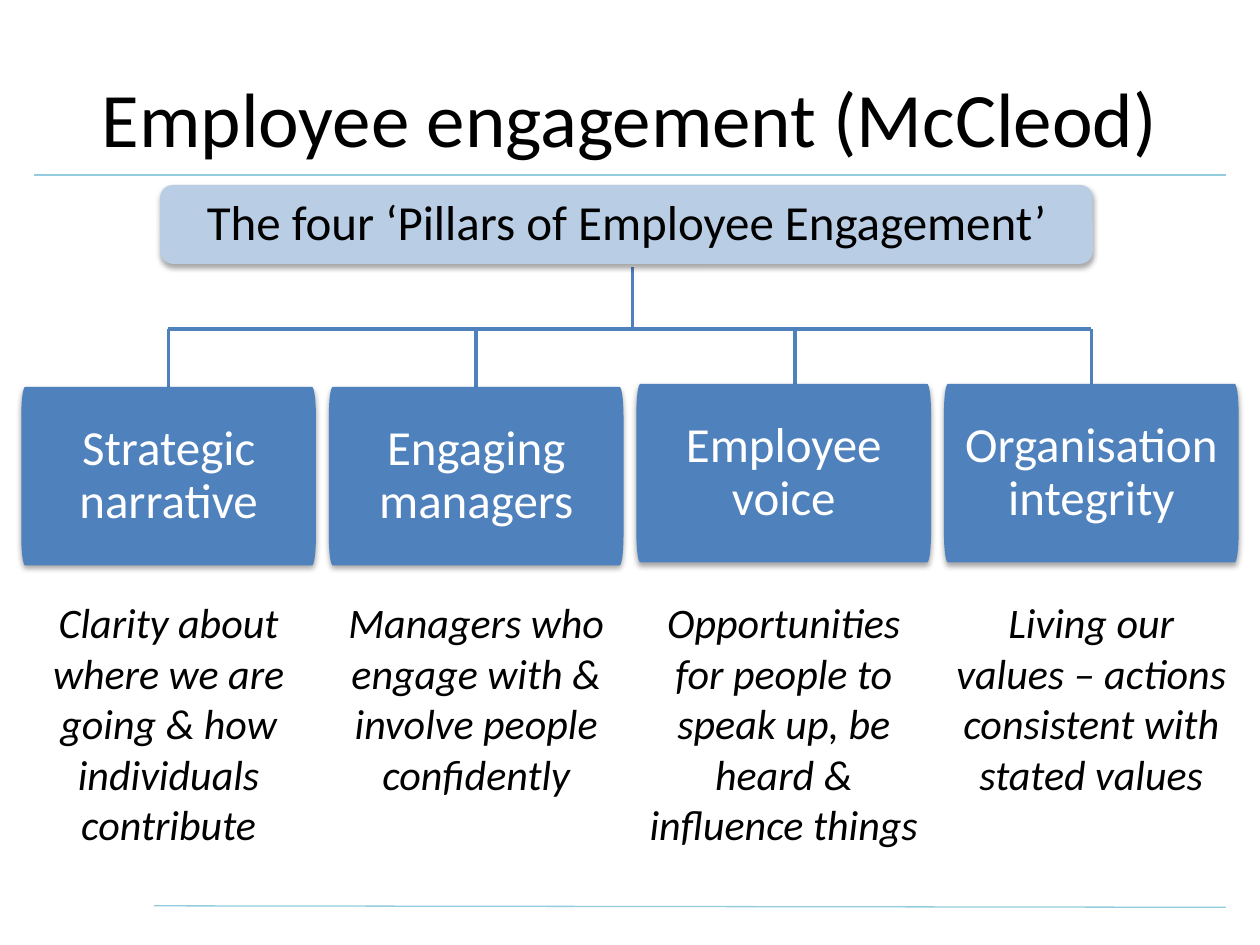
from dataclasses import dataclass
from math import cos, pi, sin

from lxml import etree
from pptx import Presentation
from pptx.dml.color import RGBColor
from pptx.enum.shapes import MSO_CONNECTOR, MSO_SHAPE
from pptx.enum.text import MSO_ANCHOR, MSO_AUTO_SIZE, PP_ALIGN
from pptx.oxml.ns import qn
from pptx.shapes.autoshape import Shape
from pptx.slide import Slide
from pptx.text.text import TextFrame
from pptx.util import Cm, Pt

STRAIGHT = MSO_CONNECTOR.STRAIGHT
ROUNDED_RECTANGLE = MSO_SHAPE.ROUNDED_RECTANGLE
MIDDLE = MSO_ANCHOR.MIDDLE
CENTER = PP_ALIGN.CENTER
FIT_TEXT = MSO_AUTO_SIZE.SHAPE_TO_FIT_TEXT

FONT = "Calibri"
BLACK = RGBColor(0x00, 0x00, 0x00)
WHITE = RGBColor(0xFF, 0xFF, 0xFF)
BLUE = RGBColor(0x4F, 0x81, 0xBD)
PALE_BLUE = RGBColor(0xB9, 0xCD, 0xE5)
AQUA = RGBColor(0x93, 0xCD, 0xDD)

# Layout in centimetres
PILLAR_LEFT = 0.43
PILLAR_PITCH = 6.2
PILLAR_WIDTH = 5.94
PILLAR_HEIGHT = 3.6
CORNER_WIDTH = 0.08
CORNER_HEIGHT = 0.58
CORNER_STEPS = 8
BUS_TOP = 6.63
DESCRIPTION_TOP = 11.91


@dataclass(frozen=True)
class Pillar:
    name: str
    description: str
    top: float
    drop_x: float


@dataclass(frozen=True)
class Line:
    start: tuple[float, float]
    end: tuple[float, float]
    color: RGBColor = BLUE
    width: float = 2


PILLARS = [
    Pillar("Strategic narrative",
           "Clarity about where we are going & how individuals contribute", 7.8, 3.4),
    Pillar("Engaging managers",
           "Managers who engage with & involve people confidently", 7.8, 9.6),
    Pillar("Employee voice",
           "Opportunities for people to speak up, be heard & influence things", 7.74, 16.03),
    Pillar("Organisation integrity",
           "Living our values – actions consistent with stated values", 7.74, 22),
]
LINES = [
    Line((3.1, 18.26), (24.71, 18.29), AQUA, 0.75),
    Line((0.69, 3.53), (24.71, 3.53), AQUA, 0.75),
    *(Line((pillar.drop_x, BUS_TOP), (pillar.drop_x, pillar.top)) for pillar in PILLARS),
    Line((12.75, 5.38), (12.75, BUS_TOP)),
    Line((22, BUS_TOP), (3.38, BUS_TOP)),
]


def write_text(frame: TextFrame, text: str, size: float, color: RGBColor,
               italic: bool = False, line_spacing: float = 1.0) -> None:
    frame.word_wrap = True
    paragraph = frame.paragraphs[0]
    paragraph.alignment = CENTER
    paragraph.line_spacing = line_spacing
    run = paragraph.add_run()
    run.text = text
    run.font.name = FONT
    run.font.size = Pt(size)
    run.font.italic = italic
    run.font.color.rgb = color


def draw_line(slide: Slide, line: Line) -> None:
    connector = slide.shapes.add_connector(
        STRAIGHT, *(Cm(value) for value in line.start + line.end))
    connector.line.color.rgb = line.color
    connector.line.width = Pt(line.width)
    etree.SubElement(connector._element.spPr, qn("a:effectLst"))


def add_soft_shadow(shape: Shape) -> None:
    shape.shadow.inherit = False
    effects = shape._element.spPr.find(qn("a:effectLst"))
    shadow = etree.SubElement(effects, qn("a:outerShdw"), blurRad=str(Pt(3.1)),
                              dist=str(Pt(1.8)), dir="5400000", rotWithShape="0")
    color = etree.SubElement(shadow, qn("a:srgbClr"), val=str(BLACK))
    etree.SubElement(color, qn("a:alpha"), val="35000")


def format_panel(shape: Shape, text: str, fill: RGBColor, text_color: RGBColor) -> None:
    shape.fill.solid()
    shape.fill.fore_color.rgb = fill
    shape.line.fill.background()
    add_soft_shadow(shape)
    frame = shape.text_frame
    frame.vertical_anchor = MIDDLE
    frame.margin_left = frame.margin_right = Cm(0.33)
    frame.margin_top = frame.margin_bottom = Cm(0.33)
    write_text(frame, text, 28, text_color, line_spacing=0.9)


def pillar_outline(left: float, top: float) -> list[tuple[int, int]]:
    """Return the points of a box with tall elliptical corners, clockwise from its left side."""
    inner_left, inner_right = left + CORNER_WIDTH, left + PILLAR_WIDTH - CORNER_WIDTH
    inner_top, inner_bottom = top + CORNER_HEIGHT, top + PILLAR_HEIGHT - CORNER_HEIGHT
    centers = [(inner_left, inner_top), (inner_right, inner_top),
               (inner_right, inner_bottom), (inner_left, inner_bottom)]
    points = []
    for corner, (x, y) in enumerate(centers):
        for step in range(CORNER_STEPS + 1):
            angle = pi + (corner + step / CORNER_STEPS) * pi / 2
            points.append((Cm(x + CORNER_WIDTH * cos(angle)),
                           Cm(y + CORNER_HEIGHT * sin(angle))))
    return points


def draw_pillar(slide: Slide, pillar: Pillar, left: float) -> None:
    start, *others = pillar_outline(left, pillar.top)
    builder = slide.shapes.build_freeform(*start)
    builder.add_line_segments(others, close=True)
    format_panel(builder.convert_to_shape(), pillar.name, BLUE, WHITE)

    description = slide.shapes.add_textbox(
        Cm(left), Cm(DESCRIPTION_TOP), Cm(PILLAR_WIDTH), Cm(5.38))
    write_text(description.text_frame, pillar.description, 24, BLACK, italic=True)
    description.text_frame.auto_size = FIT_TEXT


def draw_header(slide: Slide) -> None:
    header = slide.shapes.add_shape(
        ROUNDED_RECTANGLE, Cm(3.23), Cm(3.73), Cm(18.8), Cm(1.59))
    header.adjustments[0] = 0.16
    format_panel(header, "The four ‘Pillars of Employee Engagement’", PALE_BLUE, BLACK)


def draw_title(slide: Slide) -> None:
    title = slide.shapes.title
    title.left, title.top, title.width, title.height = Cm(1.27), Cm(0.76), Cm(22.86), Cm(3.18)
    title.text_frame.vertical_anchor = MIDDLE
    write_text(title.text_frame, "Employee engagement (McCleod)", 44, BLACK)


def main() -> None:
    presentation = Presentation()
    presentation.slide_width, presentation.slide_height = Cm(25.4), Cm(19.05)
    slide = presentation.slides.add_slide(presentation.slide_layouts.get_by_name("Title Only"))
    draw_title(slide)
    for line in LINES:
        draw_line(slide, line)
    draw_header(slide)
    for index, pillar in enumerate(PILLARS):
        draw_pillar(slide, pillar, PILLAR_LEFT + index * PILLAR_PITCH)
    presentation.save("out.pptx")


if __name__ == "__main__":
    main()
